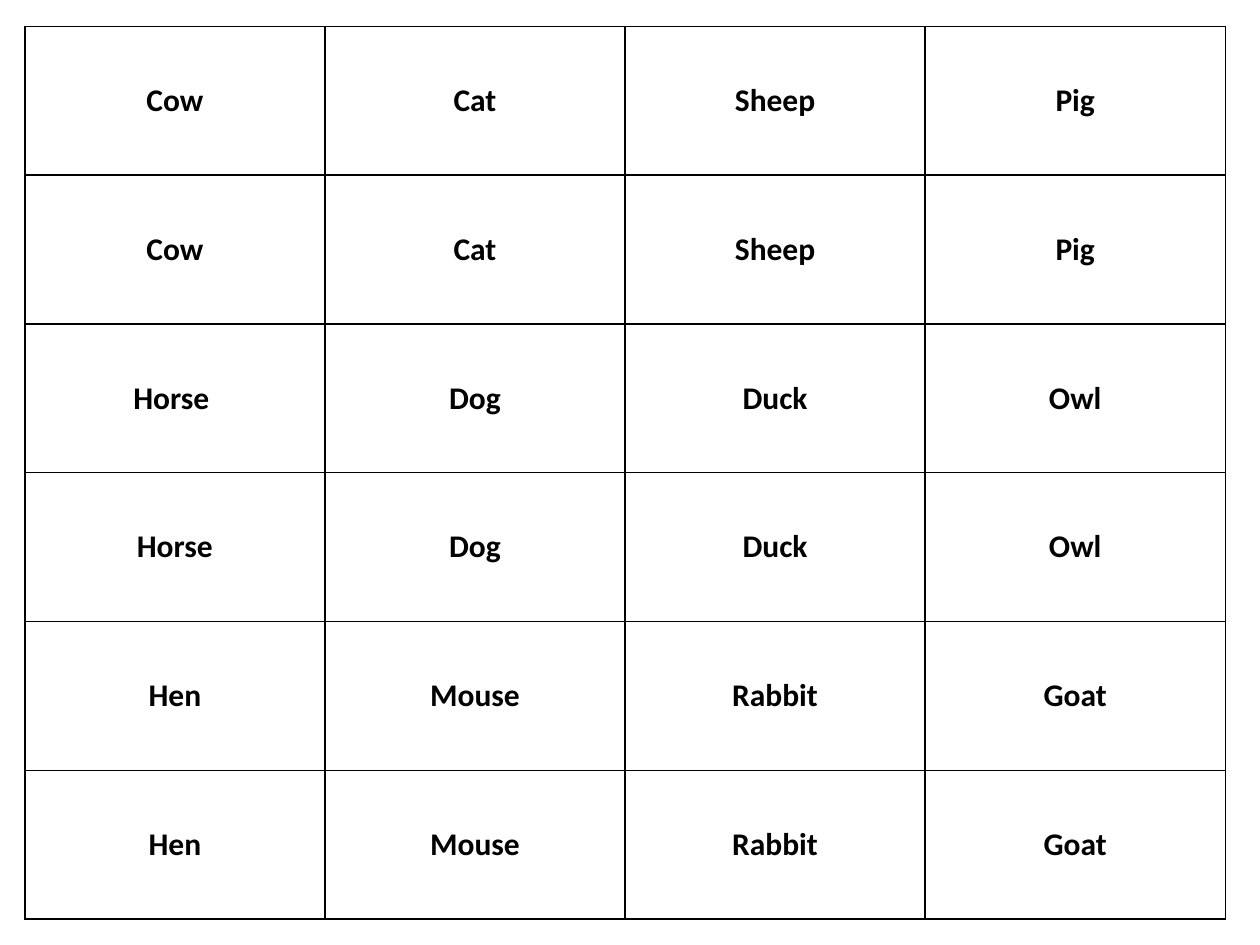
"""Build a sheet of animal word cards, laid out as a ruled table."""
from dataclasses import dataclass

from lxml.etree import SubElement
from pptx import Presentation
from pptx.dml.color import RGBColor
from pptx.enum.text import MSO_ANCHOR, PP_ALIGN
from pptx.oxml.ns import qn
from pptx.util import Cm, Pt


@dataclass(frozen=True)
class Theme:
    font: str = "Calibri"
    ink: str = "000000"
    size: int = 18
    border: int = 1


theme = Theme()
cards = [
    ["Cow", "Cat", "Sheep", "Pig"],
    ["Cow", "Cat", "Sheep", "Pig"],
    ["Horse ", "Dog", "Duck", "Owl"],
    ["Horse", "Dog", "Duck", "Owl"],
    ["Hen", "Mouse", "Rabbit", "Goat"],
    ["Hen", "Mouse", "Rabbit", "Goat"],
]
n_rows, n_cols = len(cards), len(cards[0])
card_w, card_h = 6.05, 3


def add_borders(cell):
    tc_pr = cell._tc.get_or_add_tcPr()
    for side in ("a:lnL", "a:lnR", "a:lnT", "a:lnB"):
        ln = SubElement(tc_pr, qn(side), w=str(Pt(theme.border)))
        fill = SubElement(ln, qn("a:solidFill"))
        SubElement(fill, qn("a:srgbClr"), val=theme.ink)


prs = Presentation()
prs.slide_width, prs.slide_height = Cm(25.4), Cm(19.05)
s = prs.slides.add_slide(prs.slide_layouts[6])

table = s.shapes.add_table(
    n_rows, n_cols, Cm(0.5), Cm(0.53), Cm(n_cols * card_w), Cm(n_rows * card_h)
).table
table.first_row = table.horz_banding = False
for col in table.columns:
    col.width = Cm(card_w)
for row, words in zip(table.rows, cards):
    row.height = Cm(card_h)
    for cell, word in zip(row.cells, words):
        add_borders(cell)
        cell.fill.background()
        cell.vertical_anchor = MSO_ANCHOR.MIDDLE
        p = cell.text_frame.paragraphs[0]
        p.text = word
        p.alignment = PP_ALIGN.CENTER
        font = p.runs[0].font
        font.name, font.size, font.bold = theme.font, Pt(theme.size), True
        font.color.rgb = RGBColor.from_string(theme.ink)

prs.save("out.pptx")
